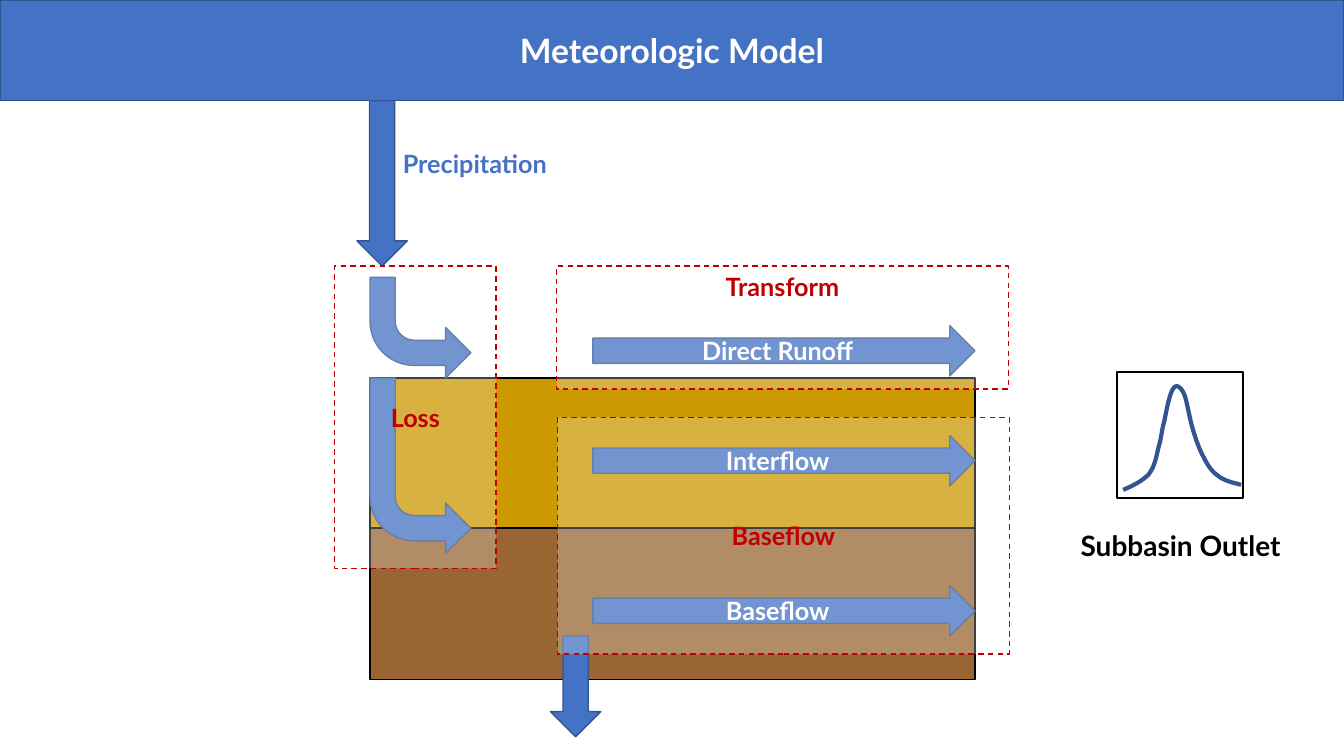
import pptx
import pptx.dml.color
import pptx.enum.dml
import pptx.enum.shapes
import pptx.enum.text
import pptx.oxml
import pptx.oxml.ns
import pptx.util
from pptx.util import Inches

RGBColor = pptx.dml.color.RGBColor
Shape = pptx.enum.shapes.MSO_SHAPE
Anchor = pptx.enum.text.MSO_ANCHOR

BLUE = RGBColor(0x44, 0x72, 0xC4)
DARK_BLUE = RGBColor(0x32, 0x54, 0x91)
SOIL = RGBColor(0xCC, 0x99, 0x00)
GROUND = RGBColor(0x99, 0x66, 0x33)
RED = RGBColor(0xC0, 0x00, 0x00)
WHITE = RGBColor(0xFF, 0xFF, 0xFF)
BLACK = RGBColor(0x00, 0x00, 0x00)

SOIL_LEFT = 3.67
FLOW_LEFT = 5.88
FLOW_WIDTH = 3.79
ARROW_WIDTH = 0.5
METHOD_TOP = 2.64

# Start point, then cubic Bezier segments (two control points and an end point)
HYDROGRAPH_START = (11.14, 4.86)
HYDROGRAPH_CURVES = [
    ((11.24, 4.82), (11.33, 4.77), (11.39, 4.71)),
    ((11.45, 4.64), (11.47, 4.53), (11.49, 4.44)),
    ((11.52, 4.35), (11.52, 4.27), (11.55, 4.17)),
    ((11.57, 4.07), (11.6, 3.9), (11.64, 3.85)),
    ((11.67, 3.81), (11.71, 3.84), (11.74, 3.9)),
    ((11.77, 3.96), (11.79, 4.11), (11.82, 4.22)),
    ((11.85, 4.33), (11.89, 4.45), (11.94, 4.54)),
    ((11.98, 4.62), (12.02, 4.68), (12.08, 4.72)),
    ((12.14, 4.77), (12.23, 4.79), (12.31, 4.81)),
]
CURVE_STEPS = 8


def write_text(shape, text, size, color, anchor):
    frame = shape.text_frame
    frame.word_wrap = True
    frame.vertical_anchor = anchor
    paragraph = frame.paragraphs[0]
    paragraph.text = text
    paragraph.alignment = pptx.enum.text.PP_ALIGN.CENTER
    font = paragraph.font
    font.name = "Lato"
    font.size = pptx.util.Pt(size)
    font.bold = True
    font.color.rgb = color


def style_shape(shape, fill, line, line_width=1):
    shape.shadow.inherit = False
    if fill is None:
        shape.fill.background()
    else:
        shape.fill.solid()
        shape.fill.fore_color.rgb = fill
    shape.line.color.rgb = line
    shape.line.width = pptx.util.Pt(line_width)


def add_block(shapes, kind, left, top, width, height, fill=BLUE, line=DARK_BLUE):
    shape = shapes.add_shape(
        kind, Inches(left), Inches(top), Inches(width), Inches(height))
    style_shape(shape, fill, line)
    return shape


def add_label(shapes, text, left, top, width, height, size, color):
    box = shapes.add_textbox(
        Inches(left), Inches(top), Inches(width), Inches(height))
    write_text(box, text, size, color, Anchor.TOP)


def add_down_arrow(shapes, left, top, height):
    add_block(shapes, Shape.DOWN_ARROW, left, top, ARROW_WIDTH, height)


def add_bent_arrow(shapes, top, height):
    """Add an arrow that comes down and turns to the right."""
    arrow = add_block(shapes, Shape.BENT_ARROW, SOIL_LEFT, top, 1, height)
    arrow.rotation = 180
    arrow._element.spPr.find(pptx.oxml.ns.qn("a:xfrm")).set("flipH", "1")


def add_flow_arrow(shapes, text, top):
    arrow = add_block(
        shapes, Shape.RIGHT_ARROW, FLOW_LEFT, top, FLOW_WIDTH, ARROW_WIDTH)
    write_text(arrow, text, 18, WHITE, Anchor.MIDDLE)


def add_method_box(shapes, text, left, top, width, height, anchor=Anchor.MIDDLE):
    """Add a dashed, see-through box that marks a modelling method."""
    box = add_block(
        shapes, Shape.RECTANGLE, left, top, width, height, WHITE, RED)
    box.line.dash_style = pptx.enum.dml.MSO_LINE.DASH
    color = box._element.spPr.find(
        pptx.oxml.ns.qn("a:solidFill")).find(pptx.oxml.ns.qn("a:srgbClr"))
    alpha = pptx.oxml.parse_xml(
        f'<a:alpha {pptx.oxml.ns.nsdecls("a")} val="25000"/>')
    color.append(alpha)
    write_text(box, text, 18, RED, anchor)


def curve_points(start, curves):
    """Return points along a chain of cubic Bezier curves, in EMU."""
    points = []
    for first, second, end in curves:
        for step in range(1, CURVE_STEPS + 1):
            t = step / CURVE_STEPS
            u = 1 - t
            points.append(tuple(
                Inches(u**3 * a + 3 * u**2 * t * b + 3 * u * t**2 * c + t**3 * d)
                for a, b, c, d in zip(start, first, second, end)))
        start = end
    return points


def add_hydrograph(slide):
    shapes = slide.shapes.add_group_shape().shapes
    add_block(shapes, Shape.RECTANGLE, 11.08, 3.69, 1.25, 1.25, None, BLACK)
    start_x, start_y = HYDROGRAPH_START
    builder = shapes.build_freeform(Inches(start_x), Inches(start_y))
    builder.add_line_segments(
        curve_points(HYDROGRAPH_START, HYDROGRAPH_CURVES), close=False)
    style_shape(builder.convert_to_shape(), None, DARK_BLUE, 3)


def main():
    presentation = pptx.Presentation()
    presentation.slide_width = Inches(13.33)
    presentation.slide_height = Inches(7.5)
    slide = presentation.slides.add_slide(presentation.slide_layouts[6])
    shapes = slide.shapes

    for top, fill in ((3.75, SOIL), (5.24, GROUND)):
        add_block(shapes, Shape.RECTANGLE, SOIL_LEFT, top, 6, 1.5, fill, BLACK)

    banner = add_block(shapes, Shape.RECTANGLE, 0, 0, 13.33, 1)
    write_text(banner, "Meteorologic Model", 24, WHITE, Anchor.MIDDLE)
    add_down_arrow(shapes, 3.54, 1, 1.64)
    add_label(shapes, "Precipitation", 3.79, 1.42, 1.84, 0.4, 18, BLUE)

    add_bent_arrow(shapes, 3.75, 1.74)
    for text, top in (("Interflow", 4.32), ("Direct Runoff", 3.23),
                      ("Baseflow", 5.81)):
        add_flow_arrow(shapes, text, top)
    add_bent_arrow(shapes, 2.75, 1)

    add_method_box(shapes, "Loss", 3.32, METHOD_TOP, 1.6, 3)
    add_down_arrow(shapes, 5.46, 6.31, 1)
    add_method_box(shapes, "Baseflow", 5.53, 4.14, 4.48, 2.35)
    add_method_box(
        shapes, "Transform", 5.52, METHOD_TOP, 4.48, 1.22, Anchor.TOP)

    add_label(shapes, "Subbasin Outlet", 10.36, 5.19, 2.7, 0.44, 20, BLACK)
    add_hydrograph(slide)
    presentation.save("out.pptx")


if __name__ == "__main__":
    main()
